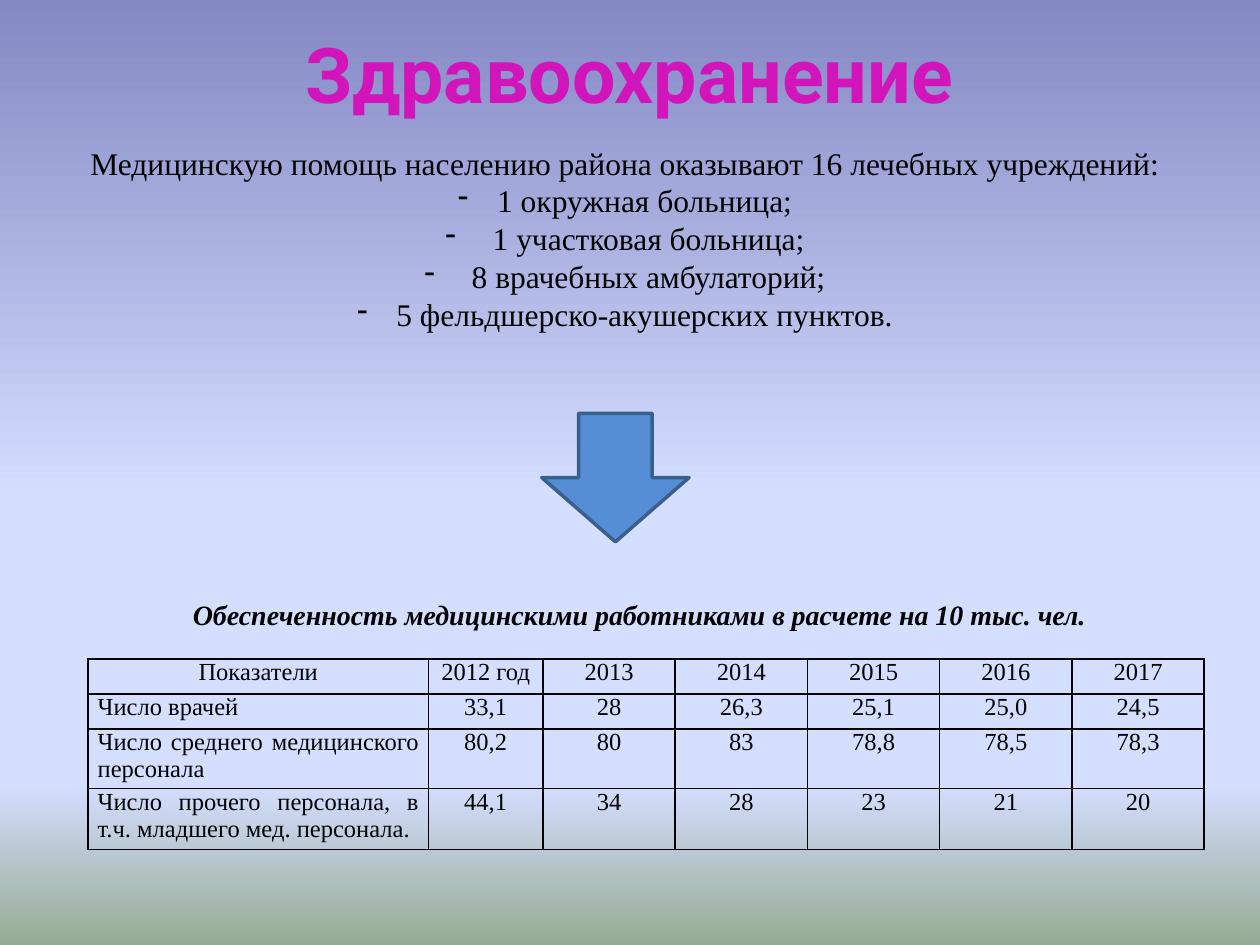
from pptx import Presentation
from pptx.dml.color import RGBColor
from pptx.enum.shapes import MSO_SHAPE
from pptx.enum.text import MSO_ANCHOR, MSO_AUTO_SIZE, PP_ALIGN
from pptx.oxml import parse_xml
from pptx.oxml.ns import nsdecls, qn
from pptx.oxml.xmlchemy import OxmlElement
from pptx.util import Pt

BLACK = RGBColor(0x00, 0x00, 0x00)
MAGENTA = RGBColor(0xD1, 0x15, 0xBB)
ARROW_FILL = RGBColor(0x55, 0x8E, 0xD5)
ARROW_LINE = RGBColor(0x3A, 0x5F, 0x8C)
SKY = RGBColor(0xD4, 0xDE, 0xFF)
SKY_TO_GRASS = [
    (0, RGBColor(0x84, 0x88, 0xC4)),
    (53, SKY),
    (83, SKY),
    (100, RGBColor(0x96, 0xAB, 0x94)),
]

SERIF = "Times New Roman"
TITLE_FORMAT = {"name": "Roboto", "size": Pt(44), "bold": True}
BODY_FORMAT = {"name": SERIF, "size": Pt(18)}
CAPTION_FORMAT = {"name": SERIF, "size": Pt(16), "bold": True, "italic": True}
CELL_FORMAT = {"name": SERIF, "size": Pt(14), "bold": False}
CELL_LAYOUT = {
    "margin_left": Pt(5.4),
    "margin_right": Pt(5.4),
    "margin_top": 0,
    "margin_bottom": 0,
    "vertical_anchor": MSO_ANCHOR.TOP,
}

INTRO = "Медицинскую помощь населению района оказывают 16 лечебных учреждений:"
INSTITUTIONS = [
    "1 окружная больница;",
    " 1 участковая больница;",
    " 8 врачебных амбулаторий;",
    "5 фельдшерско-акушерских пунктов.",
]
STAFFING = [
    ["Показатели", "2012 год", "2013", "2014", "2015", "2016", "2017"],
    ["Число врачей", "33,1", "28", "26,3", "25,1", "25,0", "24,5"],
    ["Число среднего медицинского персонала",
     "80,2", "80", "83", "78,8", "78,5", "78,3"],
    ["Число прочего персонала, в т.ч. младшего мед. персонала.",
     "44,1", "34", "28", "23", "21", "20"],
]
COLUMN_WIDTHS = [194.4, 65.5] + [75.6] * 5
ROW_HEIGHTS = [20, 20, 34, 35]


def set_attributes(target, values):
    """Set every named attribute of the target."""
    for name, value in values.items():
        setattr(target, name, value)


def write_paragraph(paragraph, text, text_format, color=BLACK, align=PP_ALIGN.CENTER):
    """Write one formatted run into a paragraph."""
    paragraph.alignment = align
    run = paragraph.add_run()
    run.text = text
    set_attributes(run.font, text_format)
    run.font.color.rgb = color


def add_dash(paragraph):
    """Give a paragraph a hanging dash bullet."""
    properties = paragraph._p.get_or_add_pPr()
    properties.set("marL", str(Pt(22.5)))
    properties.set("indent", str(-Pt(22.5)))
    properties.append(OxmlElement("a:buFontTx"))
    dash = OxmlElement("a:buChar")
    dash.set("char", "-")
    properties.append(dash)


def add_text(slide, box, text, text_format, color=BLACK, dashed=()):
    """Add a centred text box, optionally followed by dashed items."""
    frame = slide.shapes.add_textbox(*map(Pt, box)).text_frame
    frame.word_wrap = True
    frame.auto_size = MSO_AUTO_SIZE.SHAPE_TO_FIT_TEXT
    write_paragraph(frame.paragraphs[0], text, text_format, color)
    for item in dashed:
        paragraph = frame.add_paragraph()
        write_paragraph(paragraph, item, text_format, color)
        add_dash(paragraph)


def paint_background(slide, stops):
    """Fill the background with a top-to-bottom gradient."""
    fill = slide.background.fill
    fill.gradient()
    fill.gradient_angle = 270
    stop_list = next(slide._element.iter(qn("a:gsLst")))
    for stop in list(stop_list):
        stop_list.remove(stop)
    for position, color in stops:
        stop_list.append(parse_xml(
            f'<a:gs {nsdecls("a")} pos="{position * 1000}">'
            f'<a:srgbClr val="{color}"/></a:gs>'))


def add_down_arrow(slide, box):
    """Add the block arrow that leads to the table."""
    arrow = slide.shapes.add_shape(MSO_SHAPE.DOWN_ARROW, *map(Pt, box))
    arrow.shadow.inherit = False
    arrow.fill.solid()
    arrow.fill.fore_color.rgb = ARROW_FILL
    arrow.line.color.rgb = ARROW_LINE
    arrow.line.width = Pt(2)


def add_borders(cell):
    """Draw thin black lines on all four sides of a cell."""
    properties = cell._tc.get_or_add_tcPr()
    for index, side in enumerate(("lnL", "lnR", "lnT", "lnB")):
        properties.insert(index, parse_xml(
            f'<a:{side} {nsdecls("a")} w="{Pt(1)}"><a:solidFill>'
            f'<a:srgbClr val="{BLACK}"/></a:solidFill></a:{side}>'))


def add_staffing_table(slide, left, top):
    """Add the bordered table of staff per ten thousand people."""
    table = slide.shapes.add_table(
        len(STAFFING), len(COLUMN_WIDTHS), Pt(left), Pt(top),
        Pt(sum(COLUMN_WIDTHS)), Pt(sum(ROW_HEIGHTS))).table
    set_attributes(table, {"first_row": False, "horz_banding": False})
    for column, width in zip(table.columns, COLUMN_WIDTHS):
        column.width = Pt(width)
    for row, height in zip(table.rows, ROW_HEIGHTS):
        row.height = Pt(height)
    for r, values in enumerate(STAFFING):
        for c, value in enumerate(values):
            cell = table.cell(r, c)
            set_attributes(cell, CELL_LAYOUT)
            cell.fill.background()
            add_borders(cell)
            is_indicator = r > 0 and c == 0
            align = PP_ALIGN.JUSTIFY if is_indicator else PP_ALIGN.CENTER
            write_paragraph(cell.text_frame.paragraphs[0], value, CELL_FORMAT, align=align)


def main():
    """Build the health care slide and save it."""
    presentation = Presentation()
    set_attributes(presentation, {"slide_width": Pt(720), "slide_height": Pt(540)})
    slide = presentation.slides.add_slide(presentation.slide_layouts[6])
    paint_background(slide, SKY_TO_GRASS)
    add_text(slide, (31, 78.5, 652.3, 116.6), INTRO, BODY_FORMAT, dashed=INSTITUTIONS)
    add_staffing_table(slide, 50.4, 376.6)
    add_text(slide, (84.2, 337.7, 562.3, 26.6),
             "Обеспеченность медицинскими работниками в расчете на 10 тыс. чел.",
             CAPTION_FORMAT)
    add_down_arrow(slide, (309.6, 236.2, 84.2, 73.4))
    add_text(slide, (16.6, 11.5, 686.2, 60.5), "Здравоохранение", TITLE_FORMAT, MAGENTA)
    presentation.save("out.pptx")


if __name__ == "__main__":
    main()
